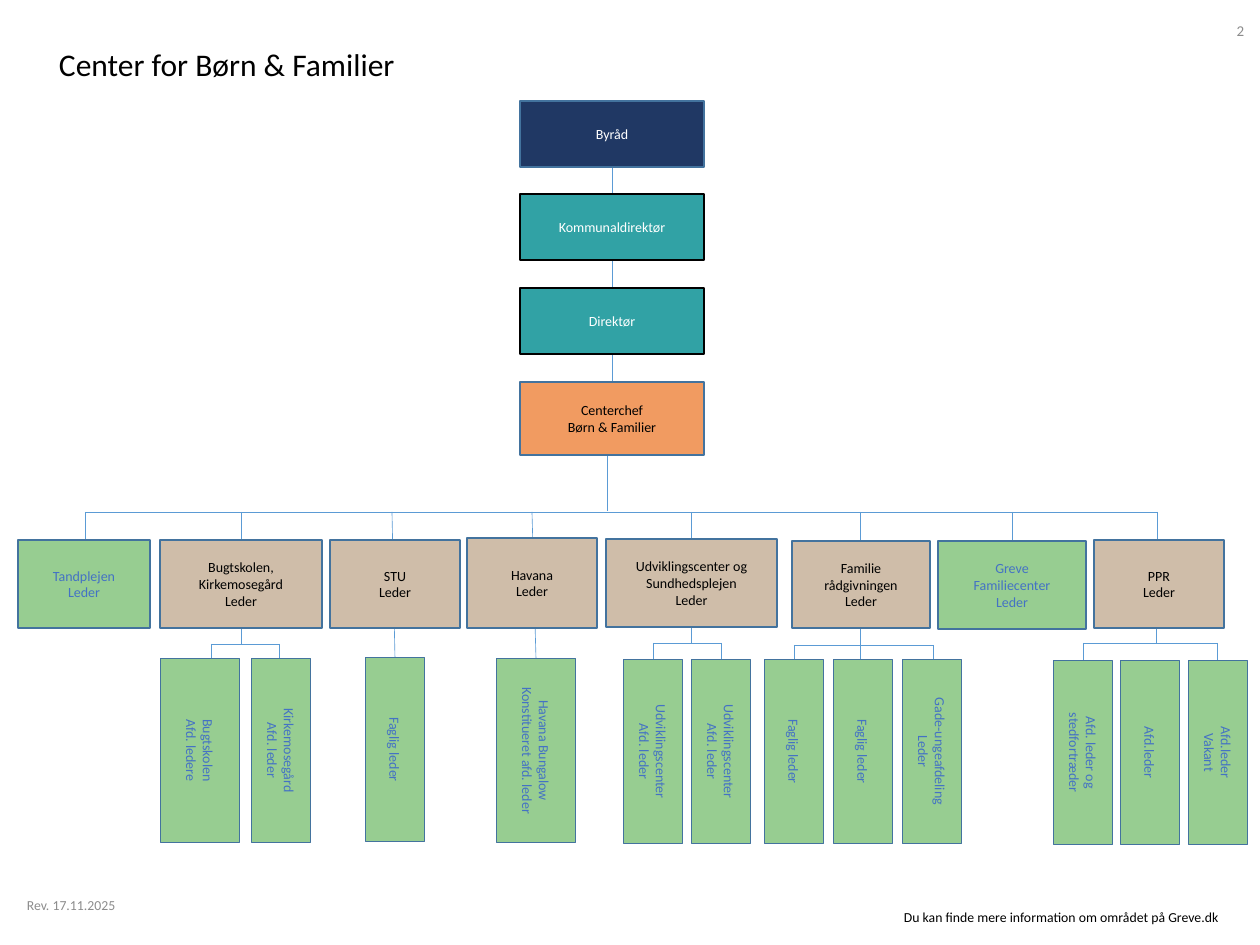
"""Builds the organisation chart slide for Center for Børn & Familier."""
from typing import NamedTuple

from lxml import etree
from pptx import Presentation
from pptx import util as u
from pptx.dml.color import RGBColor
from pptx.enum import shapes, text
from pptx.oxml.ns import qn

SCALE = 10160
FONT = "Calibri"
NAVY, TEAL, ORANGE, GREEN, SAND = "203864", "31A2A5", "F19B61", "97CD91", "CFBDA9"
BLACK, WHITE, GREY, BLUE = "000000", "FFFFFF", "8C8C8C", "4472C4"
EDGE, LINK = "43739E", "5B9BD5"
LENGTH = 184
BUS = 512


class Box(NamedTuple):
    left: int
    top: int
    width: int
    height: int
    words: str
    fill: str
    ink: str
    edge: str = EDGE


class Staff(NamedTuple):
    mid: int
    top: int
    words: str
    width: int = 59


class Fork(NamedTuple):
    stem: int
    bar: int
    drops: tuple[int, ...]


class Label(NamedTuple):
    left: int
    top: int
    width: int
    height: int
    words: str
    size: float
    ink: str
    align: text.PP_ALIGN = text.PP_ALIGN.LEFT
    anchor: text.MSO_ANCHOR = text.MSO_ANCHOR.MIDDLE


TITLE = Label(50, 41, 384, 48, "Center for Børn & Familier", 25.2, BLACK,
              anchor=text.MSO_ANCHOR.TOP)
LABELS = (
    Label(1210, 6, 43, 50, "2", 12, GREY, text.PP_ALIGN.RIGHT),
    Label(18, 891, 223, 29, "Rev. 17.11.2025", 11, GREY),
    Label(895, 904, 376, 26, "Du kan finde mere information om området på Greve.dk",
          11, BLACK, anchor=text.MSO_ANCHOR.TOP),
)
CHAIN = (
    Box(520, 101, 184, 66, "Byråd", NAVY, WHITE),
    Box(520, 194, 184, 66, "Kommunaldirektør", TEAL, WHITE, BLACK),
    Box(520, 288, 184, 66, "Direktør", TEAL, WHITE, BLACK),
    Box(520, 382, 184, 73, "Centerchef\nBørn & Familier", ORANGE, BLACK),
)
UNITS = (
    Box(18, 540, 132, 88, "Tandplejen\nLeder", GREEN, BLUE),
    Box(160, 540, 162, 88, "Bugtskolen, Kirkemosegård Leder", SAND, BLACK),
    Box(330, 540, 130, 88, "STU\nLeder", SAND, BLACK),
    Box(467, 538, 130, 90, "Havana\nLeder", SAND, BLACK),
    Box(606, 539, 171, 88, "Udviklingscenter og Sundhedsplejen\nLeder", SAND, BLACK),
    Box(792, 541, 138, 87, "Familie\nrådgivningen\nLeder", SAND, BLACK),
    Box(938, 541, 148, 88, "Greve Familiecenter\nLeder", GREEN, BLUE),
    Box(1094, 540, 130, 88, "PPR\nLeder", SAND, BLACK),
)
STAFF = (
    Staff(200, 659, "Bugtskolen\nAfd. ledere", 79),
    Staff(281, 659, "Kirkemosegård\nAfd. leder"),
    Staff(395, 658, "Faglig leder"),
    Staff(536, 659, "Havana Bungalow\nKonstitueret afd. leder", 79),
    Staff(653, 660, "Udviklingscenter\nAfd. leder"),
    Staff(721, 660, "Udviklingscenter\nAfd. leder"),
    Staff(794, 660, "Faglig leder"),
    Staff(863, 660, "Faglig leder"),
    Staff(932, 660, "Gade-ungeafdeling\nLeder"),
    Staff(1083, 661, "Afd. leder og stedfortræder"),
    Staff(1150, 661, "Afd.leder"),
    Staff(1218, 661, "Afd.leder\nVakant"),
)
FORKS = (
    Fork(241, 644, (211, 279)),
    Fork(691, 643, (653, 721)),
    Fork(860, 645, (794, 860, 933)),
    Fork(1156, 643, (1083, 1217)),
)
LINKS = (
    (612, 167, 612, 194), (612, 382, 612, 260), (607, 453, 607, 511),
    (85, BUS, 1157, BUS), (395, 658, 392, BUS), (536, 659, 532, BUS),
)
DROPS = (85, 241, 691, 860, 1012, 1157)


def px(num: float) -> int:
    """Turn pixels into EMU."""
    return round(num * SCALE)


def tint(code: str) -> RGBColor:
    """Turn a hex string into a colour."""
    return RGBColor.from_string(code)


def write(frame, words: str, size: float, ink: str, align, **form) -> None:
    """Fill a text frame with one paragraph per line of words."""
    for key, value in {"word_wrap": True, "auto_size": text.MSO_AUTO_SIZE.NONE,
                       **form}.items():
        setattr(frame, key, value)
    frame.text = words
    for para in frame.paragraphs:
        para.alignment = align
        for key, value in {"name": FONT, "size": u.Pt(size), "bold": False}.items():
            setattr(para.font, key, value)
        para.font.color.rgb = tint(ink)


def draw(slide, box: Box, turn: int = 0) -> None:
    """Draw a filled box with centred words."""
    shape = slide.shapes.add_shape(shapes.MSO_SHAPE.RECTANGLE, *map(px, box[:4]))
    shape.rotation = turn
    shape.shadow.inherit = False
    shape.fill.solid()
    shape.fill.fore_color.rgb = tint(box.fill)
    shape.line.color.rgb = tint(box.edge)
    shape.line.width = u.Pt(1)
    write(shape.text_frame, box.words, 11.2, box.ink, text.PP_ALIGN.CENTER,
          vertical_anchor=text.MSO_ANCHOR.MIDDLE, margin_left=px(27),
          margin_right=px(27), margin_top=px(14), margin_bottom=px(14))


def stand(slide, staff: Staff) -> None:
    """Draw an upright staff box as a turned rectangle."""
    top = staff.top + (LENGTH - staff.width) // 2
    draw(slide, Box(staff.mid - LENGTH // 2, top, LENGTH, staff.width,
                    staff.words, GREEN, BLUE), 90)


def link(slide, *ends: int) -> None:
    """Draw a thin line between two points."""
    line = slide.shapes.add_connector(shapes.MSO_CONNECTOR.STRAIGHT, *map(px, ends))
    line.line.color.rgb = tint(LINK)
    line.line.width = u.Pt(0.5)
    etree.SubElement(line._element.spPr, qn("a:effectLst"))


def split(slide, fork: Fork) -> None:
    """Draw a stem, a bar and the drops below it."""
    link(slide, fork.stem, 627, fork.stem, fork.bar)
    link(slide, fork.drops[0], fork.bar, fork.drops[-1], fork.bar)
    for drop in fork.drops:
        link(slide, drop, fork.bar, drop, 660)


def place(shape, label: Label) -> None:
    """Move a text shape and write its label."""
    for key, value in zip(("left", "top", "width", "height"), label):
        setattr(shape, key, px(value))
    write(shape.text_frame, label.words, label.size, label.ink, label.align,
          vertical_anchor=label.anchor)


def main() -> None:
    """Build and save the slide."""
    deck = Presentation()
    deck.slide_width, deck.slide_height = px(1260), px(945)
    slide = deck.slides.add_slide(deck.slide_layouts[5])
    place(slide.shapes.title, TITLE)
    for label in LABELS:
        place(slide.shapes.add_textbox(0, 0, 0, 0), label)
    for ends in LINKS:
        link(slide, *ends)
    for drop in DROPS:
        link(slide, drop, BUS, drop, 540)
    for fork in FORKS:
        split(slide, fork)
    for box in CHAIN + UNITS:
        draw(slide, box)
    for staff in STAFF:
        stand(slide, staff)
    deck.save("out.pptx")


if __name__ == "__main__":
    main()
